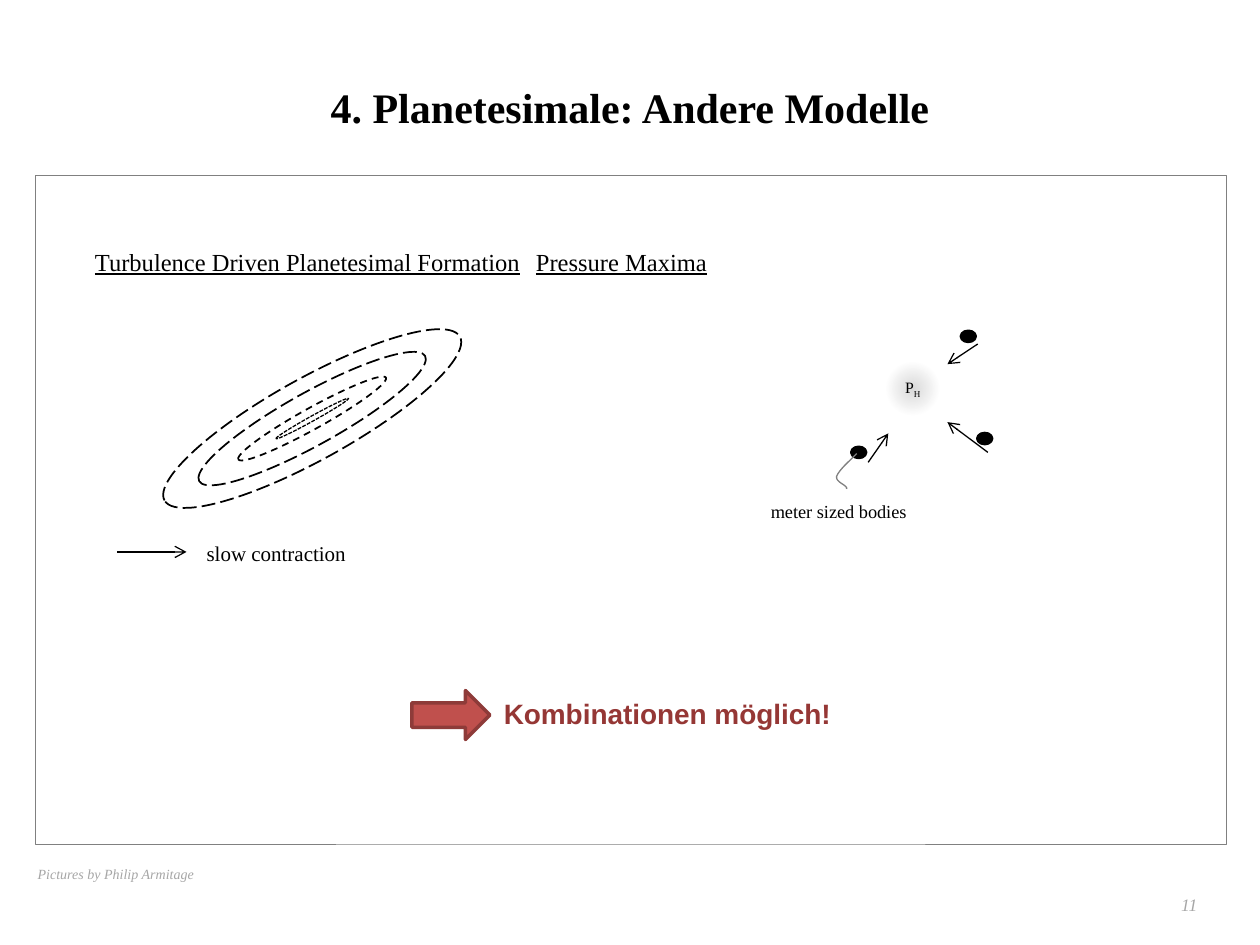
from pptx import Presentation
from pptx.dml.color import RGBColor
from pptx.enum.dml import MSO_LINE
from pptx.enum.shapes import MSO_CONNECTOR, MSO_SHAPE
from pptx.enum.text import MSO_ANCHOR, PP_ALIGN
from pptx.oxml import parse_xml
from pptx.oxml.ns import nsdecls, qn
from pptx.util import Pt

SERIF = "Times New Roman"
BLACK, GREY, LIGHT = "000000", "808080", "A6A6A6"


def rgb(color):
    return RGBColor.from_string(color)


def pts(*values):
    return [Pt(v) for v in values]


def add_run(p, text, size, color=BLACK, name=SERIF, **styles):
    r = p.add_run()
    r.text = text
    r.font.size, r.font.name = Pt(size), name
    r.font.color.rgb = rgb(color)
    for style, value in styles.items():
        setattr(r.font, style, value)
    return r


def set_line(sp, color, width, dash=None):
    sp.line.color.rgb = rgb(color)
    sp.line.width = Pt(width)
    if dash:
        sp.line.dash_style = dash


def add_text(s, box, text, size, spacing=None, align=None, wrap=True, **styles):
    tf = s.shapes.add_textbox(*pts(*box)).text_frame
    tf.word_wrap = wrap
    p = tf.paragraphs[0]
    p.line_spacing, p.alignment = spacing, align
    add_run(p, text, size, **styles)
    return tf


def add_shape(s, kind, box, fill=None):
    sp = s.shapes.add_shape(kind, *pts(*box))
    sp.shadow.inherit = False
    if fill:
        sp.fill.solid()
        sp.fill.fore_color.rgb = rgb(fill)
    else:
        sp.fill.background()
    return sp


def centred(x, y, w, h):
    return x - w / 2, y - h / 2, w, h


def add_arrow(s, x1, y1, x2, y2):
    cn = s.shapes.add_connector(MSO_CONNECTOR.STRAIGHT, *pts(x1, y1, x2, y2))
    set_line(cn, BLACK, 0.75)
    cn.line._get_or_add_ln().append(parse_xml(f'<a:tailEnd {nsdecls("a")} type="arrow"/>'))
    cn._element.spPr.append(parse_xml(f'<a:effectLst {nsdecls("a")}/>'))


def bezier(p0, p1, p2, p3, steps=12):
    for i in range(steps + 1):
        t = i / steps
        weights = (1 - t) ** 3, 3 * t * (1 - t) ** 2, 3 * t * t * (1 - t), t ** 3
        yield tuple(sum(w * p[k] for w, p in zip(weights, (p0, p1, p2, p3))) for k in (0, 1))


def place(sp, x, y, w, h):
    sp.left, sp.top, sp.width, sp.height = pts(x, y, w, h)


def title(s, box):
    sp = s.shapes.title
    place(sp, *box)
    tf = sp.text_frame
    tf.vertical_anchor = MSO_ANCHOR.MIDDLE
    p = tf.paragraphs[0]
    p.alignment = PP_ALIGN.CENTER
    add_run(p, "4. Planetesimale: Andere Modelle", 24, bold=True)


def panel(s, box):
    sp = s.placeholders[1]
    place(sp, *box)
    set_line(sp, GREY, 0.25)
    tf = sp.text_frame
    tf.margin_top = Pt(41)
    p = tf.paragraphs[0]
    p.space_before = Pt(0)
    # Both headings share one line, split by a tab stop
    pPr = p._p.get_or_add_pPr()
    pPr.set("marL", str(Pt(27)))
    pPr.set("indent", "0")
    pPr.append(parse_xml(f'<a:buNone {nsdecls("a")}/>'))
    pPr.append(parse_xml(f'<a:tabLst {nsdecls("a")}><a:tab pos="{Pt(387)}" algn="l"/></a:tabLst>'))
    add_run(p, "Turbulence Driven Planetesimal Formation", 14, underline=True)
    add_run(p, "\t", 14)
    add_run(p, "Pressure Maxima", 14, underline=True)


def turbulence(s, x, y):
    # Contracting rings around one centre
    rings = [
        (193, 46.8, 1, MSO_LINE.LONG_DASH),
        (147.6, 30.2, 1, MSO_LINE.LONG_DASH),
        (96.5, 12.2, 1, MSO_LINE.DASH),
        (47.5, 2.9, 0.75, MSO_LINE.SQUARE_DOT),
    ]
    for w, h, width, dash in rings:
        ring = add_shape(s, MSO_SHAPE.OVAL, centred(x + 112.4, y + 46.2, w, h))
        ring.rotation = 331
        set_line(ring, BLACK, width, dash)
    # Legend
    add_arrow(s, x + 1, y + 122.4, x + 40.6, y + 122.4)
    add_text(s, (x + 45, y + 105, 238, 26.6), "slow contraction", 12, spacing=1.5)


def pressure(s, x, y):
    # Pressure maximum with a radial glow
    core = add_shape(s, MSO_SHAPE.OVAL, (x + 68.8, y + 17.3, 39.6, 39.6))
    core.line.fill.background()
    core.fill.gradient()
    for stop, pos, color in zip(core.fill.gradient_stops, (0, 0.57), ("D9D9D9", "FFFFFF")):
        stop.position, stop.color.rgb = pos, rgb(color)
    grad = core._element.spPr.find(qn("a:gradFill"))
    grad.replace(grad.find(qn("a:lin")), parse_xml(
        f'<a:path {nsdecls("a")} path="circle">'
        '<a:fillToRect l="50000" t="50000" r="50000" b="50000"/></a:path>'))
    tf = core.text_frame
    tf.margin_left = tf.margin_right = 0
    tf.vertical_anchor = MSO_ANCHOR.MIDDLE
    p = tf.paragraphs[0]
    p.alignment = PP_ALIGN.CENTER
    add_run(p, "P", 9)
    add_run(p, "H", 9).font._element.set("baseline", "-25000")
    # Bodies drifting inwards: dot centre, arrow start, arrow end
    bodies = [
        ((57.7, 73.5), (63.1, 79.2), (74.6, 62.7)),
        ((129.7, 65.6), (131.5, 73.5), (108.4, 56.2)),
        ((120.3, 7.2), (125.7, 11.6), (108.4, 23.1)),
    ]
    for (cx, cy), (x1, y1), (x2, y2) in bodies:
        add_arrow(s, x + x1, y + y1, x + x2, y + y2)
        dot = add_shape(s, MSO_SHAPE.OVAL, centred(x + cx, y + cy, 7.9, 5.8), BLACK)
        set_line(dot, BLACK, 2)
    # Curved leader to the label
    curve = [
        *bezier((56.6, 74.2), (51.6, 79.2), (46.5, 83.6), (45.1, 87.2)),
        *bezier((45.1, 87.2), (44.4, 90.8), (51.6, 92.2), (50.8, 94.4)),
    ]
    start, *rest = [(Pt(x + cx), Pt(y + cy)) for cx, cy in curve]
    fb = s.shapes.build_freeform(*start)
    fb.add_line_segments(rest, close=False)
    leader = fb.convert_to_shape()
    leader.shadow.inherit = False
    leader.fill.background()
    set_line(leader, GREY, 0.75)
    add_text(s, (x + 0.4, y + 90.8, 238, 25), "meter sized bodies", 10.5, spacing=1.5)


def conclusion(s, x, y):
    arrow = add_shape(s, MSO_SHAPE.RIGHT_ARROW, (x, y, 44.6, 28), "C0504D")
    set_line(arrow, "8E3B39", 2)
    add_text(s, (x + 45.4, y, 221, 26.6), "Kombinationen möglich!", 16,
             color="953735", name="Arial", bold=True)


def footer(s, x, y):
    add_text(s, (x, y, 111.6, 17.3), "Pictures by Philip Armitage", 8,
             wrap=False, color=LIGHT, italic=True)
    tf = add_text(s, (x + 502, y + 11.5, 167.8, 28.8), "11", 10,
                  align=PP_ALIGN.RIGHT, color=LIGHT, italic=True)
    tf.margin_right = 0
    tf.vertical_anchor = MSO_ANCHOR.MIDDLE


def main():
    prs = Presentation()
    prs.slide_width, prs.slide_height = pts(720, 540)
    s = prs.slides.add_slide(prs.slide_layouts[1])
    title(s, (36, 21.6, 648, 78.5))
    left, top = 20, 100
    panel(s, (left, top, 680.5, 382.3))
    turbulence(s, left + 46, top + 93)
    pressure(s, left + 413, top + 85)
    conclusion(s, left + 215.4, top + 294.6)
    footer(s, 14.4, 491)
    prs.save("out.pptx")


if __name__ == "__main__":
    main()
